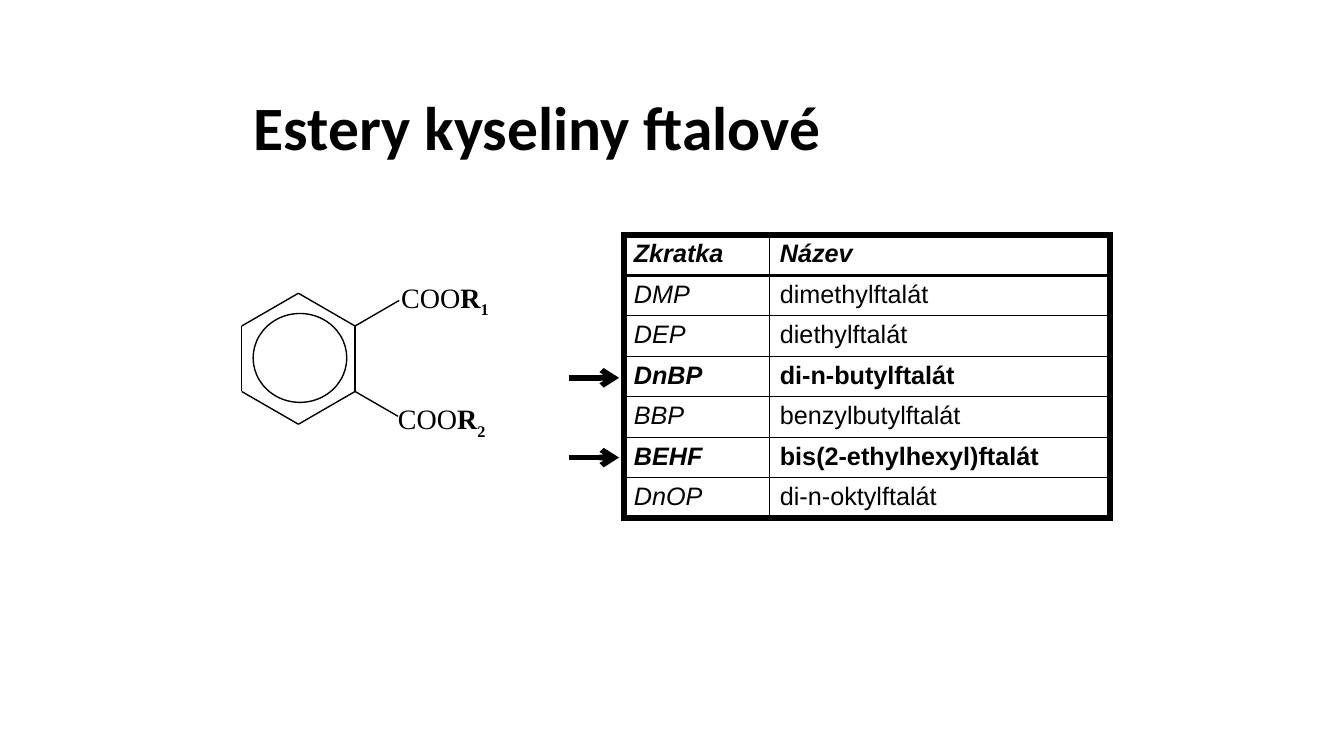
from math import cos, radians, sin

from lxml.etree import SubElement
from pptx import Presentation
from pptx.dml.color import RGBColor
from pptx.enum.shapes import MSO_CONNECTOR, MSO_SHAPE
from pptx.enum.text import MSO_ANCHOR, PP_ALIGN
from pptx.oxml import parse_xml
from pptx.oxml.ns import nsdecls, qn
from pptx.util import Cm, Pt

BLACK = RGBColor(0, 0, 0)

PHTHALATES = [
    ("Zkratka", "Název"),
    ("DMP", "dimethylftalát"),
    ("DEP", "diethylftalát"),
    ("DnBP", "di-n-butylftalát"),
    ("BBP", "benzylbutylftalát"),
    ("BEHF", "bis(2-ethylhexyl)ftalát"),
    ("DnOP", "di-n-oktylftalát"),
]
BOLD_ROWS = {0, 3, 5}
ROW_HEIGHT = 1.02
OUTER, HEADER, COLUMN, ROW = 5, 2, 1, 0.75  # border widths in points


def set_font(font, name, size, bold=False, italic=False):
    font.name, font.size = name, Pt(size)
    font.bold, font.italic = bold, italic
    font.color.rgb = BLACK


def add_text(slide, left, top, width, height, margin_x, margin_y):
    tf = slide.shapes.add_textbox(Cm(left), Cm(top), Cm(width), Cm(height)).text_frame
    tf.word_wrap = True
    tf.margin_left = tf.margin_right = Cm(margin_x)
    tf.margin_top = tf.margin_bottom = Cm(margin_y)
    return tf


def add_title(slide, text):
    tf = add_text(slide, 6.15, 1.7, 21.59, 3.18, 0.25, 0.13)
    tf.vertical_anchor = MSO_ANCHOR.MIDDLE
    p = tf.paragraphs[0]
    p.text = text
    p.line_spacing = 0.9
    set_font(p.font, "Calibri", 44, bold=True)


def add_line(slide, start, end, width=1, arrow=False):
    line = slide.shapes.add_connector(
        MSO_CONNECTOR.STRAIGHT, *(Cm(v) for v in (*start, *end)))
    line.line.color.rgb = BLACK
    line.line.width = Pt(width)
    if arrow:
        SubElement(line.line._get_or_add_ln(), qn("a:tailEnd"), type="arrow")
    SubElement(line._element.spPr, qn("a:effectLst"))


def add_ester_group(slide, left, top, number):
    p = add_text(slide, left, top, 4, 1.24, 0.1, 0.1).paragraphs[0]
    for text, bold in (("COO", False), ("R", True), (number, True)):
        r = p.add_run()
        r.text = text
        set_font(r.font, "Times New Roman", 20, bold)
    r.font._element.set("baseline", "-25000")


def add_molecule(slide):
    # Benzene ring: corners run clockwise from the top
    x, y, radius = 7.52, 9.04, 1.65
    corners = [(x + radius * sin(radians(a)), y - radius * cos(radians(a)))
               for a in range(0, 360, 60)]
    for start, end in zip(corners, corners[1:] + corners[:1]):
        add_line(slide, start, end)
    sp = slide.shapes.add_shape(MSO_SHAPE.OVAL, Cm(6.38), Cm(7.9), Cm(2.36), Cm(2.24))
    sp.shadow.inherit = False
    sp.fill.background()
    sp.line.color.rgb = BLACK
    sp.line.width = Pt(1)

    # Two ester groups
    add_line(slide, corners[1], (10.06, 7.57))
    add_line(slide, corners[2], (10.03, 10.49))
    add_ester_group(slide, 10.01, 6.96, "1")
    add_ester_group(slide, 9.93, 10.03, "2")


def set_borders(cell, **widths):
    tcPr = cell._tc.get_or_add_tcPr()
    for i, side in enumerate("LRTB"):
        tcPr.insert(i, parse_xml(
            f'<a:ln{side} {nsdecls("a")} w="{Pt(widths[side])}"><a:solidFill>'
            f'<a:srgbClr val="{BLACK}"/></a:solidFill></a:ln{side}>'))


def add_phthalate_table(slide, left, top):
    widths = (3.68, 8.58)
    last = len(PHTHALATES) - 1
    table = slide.shapes.add_table(
        len(PHTHALATES), len(widths), Cm(left), Cm(top),
        Cm(sum(widths)), Cm(ROW_HEIGHT * len(PHTHALATES))).table
    table.first_row = table.horz_banding = False
    for column, width in zip(table.columns, widths):
        column.width = Cm(width)
    for i, texts in enumerate(PHTHALATES):
        table.rows[i].height = Cm(ROW_HEIGHT)
        for j, text in enumerate(texts):
            cell = table.cell(i, j)
            cell.fill.background()
            p = cell.text_frame.paragraphs[0]
            p.text = text
            if i == 0 or j == 1:
                p.alignment = PP_ALIGN.JUSTIFY
            set_font(p.font, "Arial", 18, i in BOLD_ROWS, i == 0 or j == 0)
            set_borders(
                cell,
                L=OUTER if j == 0 else COLUMN,
                R=OUTER if j == 1 else COLUMN,
                T={0: OUTER, 1: HEADER}.get(i, ROW),
                B={0: HEADER, last: OUTER}.get(i, ROW))


def main():
    prs = Presentation()
    prs.slide_width, prs.slide_height = Cm(33.87), Cm(19.05)
    slide = prs.slides.add_slide(prs.slide_layouts[6])

    add_title(slide, "Estery kyseliny ftalové")
    add_molecule(slide)

    # Arrows to the highlighted rows
    for y in (9.52, 11.53):
        add_line(slide, (14.33, y), (15.6, y), 4, arrow=True)

    add_phthalate_table(slide, 15.72, 5.92)
    prs.save("out.pptx")


if __name__ == "__main__":
    main()
